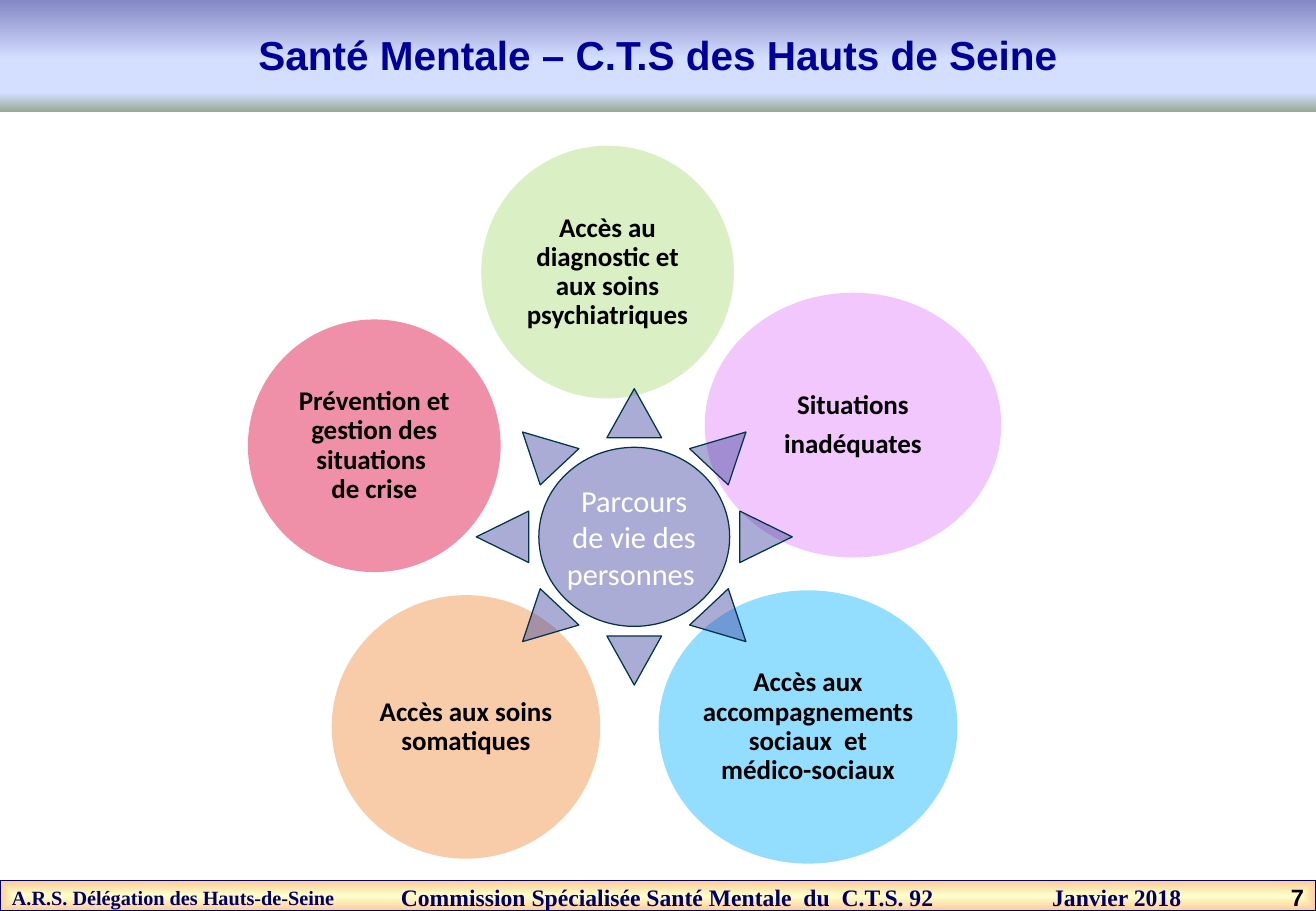
from lxml import etree
from pptx import Presentation
from pptx.dml.color import RGBColor
from pptx.enum.shapes import MSO_SHAPE
from pptx.enum.text import MSO_ANCHOR, MSO_AUTO_SIZE, PP_ALIGN
from pptx.oxml import parse_xml
from pptx.oxml.ns import nsdecls, qn
from pptx.util import Inches, Pt

BLACK = RGBColor(0x00, 0x00, 0x00)
WHITE = RGBColor(0xFF, 0xFF, 0xFF)
TITLE_BLUE = RGBColor(0x00, 0x00, 0x99)
FOOTER_BLUE = RGBColor(0x00, 0x00, 0x66)
SUN_BLUE = RGBColor(0x44, 0x48, 0xA2)
SUN_EDGE = RGBColor(0x00, 0x34, 0x4A)
GREEN = RGBColor(0xDA, 0xEF, 0xC3)
LILAC = RGBColor(0xF1, 0xC7, 0xFD)
SKY = RGBColor(0x93, 0xDE, 0xFF)
PEACH = RGBColor(0xF8, 0xCC, 0xA9)
ROSE = RGBColor(0xF0, 0x90, 0xA8)
CREAM = RGBColor(0xFF, 0xFF, 0xCC)
ORANGE = RGBColor(0xFF, 0xCC, 0x99)
BANNER_STOPS = [
    (0, RGBColor(0x84, 0x88, 0xC4)),
    (53, RGBColor(0xD4, 0xDE, 0xFF)),
    (83, RGBColor(0xD4, 0xDE, 0xFF)),
    (100, RGBColor(0x96, 0xAB, 0x94)),
]
FOOTER_STOPS = [(0, CREAM), (100, ORANGE)]
DOWNWARD = '<a:lin ang="5400000" scaled="0"/>'
FROM_CENTRE = ('<a:path path="shape"><a:fillToRect l="50000" t="50000" '
               'r="50000" b="50000"/></a:path>')

WIDTH, HEIGHT = 10.83, 7.5
BANNER_HEIGHT, FOOTER_HEIGHT = 0.92, 0.25
SUN_BOX = (3.92, 3.2, 2.6, 2.44)

TITLE = "Santé Mentale – C.T.S des Hauts de Seine"
JOURNEY = "Parcours de vie des personnes "
THEMES = [
    ("Accès au diagnostic et aux soins psychiatriques", GREEN, (3.96, 1.2, 2.08, 2.08)),
    ("Situations\ninadéquates", LILAC, (5.8, 2.41, 2.44, 2.18)),
    ("Accès aux accompagnements sociaux  et médico-sociaux", SKY, (5.42, 4.86, 2.46, 2.25)),
    ("Accès aux soins somatiques", PEACH, (2.73, 4.9, 2.21, 2.17)),
    ("Prévention et gestion des situations \vde crise", ROSE, (2.04, 2.63, 2.08, 2.08)),
]

TIMES, ARIAL = "Times New Roman", "Arial"
FOOTER = [
    ("A.R.S. Délégation des Hauts-de-Seine", 0, 3.2, PP_ALIGN.LEFT, TIMES, 12, FOOTER_BLUE),
    ("Commission Spécialisée Santé Mentale  du  C.T.S. 92", 3.2, 5, PP_ALIGN.LEFT, TIMES, 14,
     FOOTER_BLUE),
    ("Janvier 2018", 7.39, 2.43, PP_ALIGN.RIGHT, TIMES, 14, FOOTER_BLUE),
    ("7", 10.33, 0.5, PP_ALIGN.RIGHT, ARIAL, 14, BLACK),
]

CENTRED = {"alignment": PP_ALIGN.CENTER}
TITLE_PARAGRAPH = {**CENTRED, "line_spacing": 1.5}
THEME_PARAGRAPH = {**CENTRED, "line_spacing": 0.9, "space_after": Pt(6)}
TITLE_FONT = {"name": ARIAL, "size": Pt(24), "bold": True}
THEME_FONT = {"name": "Calibri", "size": Pt(16), "bold": True}
JOURNEY_FONT = {"name": "Calibri", "size": Pt(18), "bold": False}
NO_MARGINS = dict.fromkeys(("margin_left", "margin_top", "margin_right", "margin_bottom"), 0)
INSIDE = {**NO_MARGINS, "word_wrap": True, "vertical_anchor": MSO_ANCHOR.MIDDLE}
FOOTER_FRAME = {**INSIDE, "margin_left": Inches(0.1), "margin_right": Inches(0.1)}
TITLE_FRAME = {"word_wrap": True, "vertical_anchor": MSO_ANCHOR.TOP,
               "auto_size": MSO_AUTO_SIZE.NONE}


def apply(target, values):
    """Set each named attribute on the target."""
    for name, value in values.items():
        setattr(target, name, value)


def write(shape, text, frame_format, paragraph_format, font_format, color):
    """Fill a shape with formatted text."""
    frame = shape.text_frame
    frame.text = text
    apply(frame, frame_format)
    for paragraph in frame.paragraphs:
        apply(paragraph, paragraph_format)
        for run in paragraph.runs:
            apply(run.font, font_format)
            run.font.color.rgb = color


def add_gradient(shape, stops, direction):
    """Give a shape a gradient fill."""
    marks = "".join(f'<a:gs pos="{position * 1000}"><a:srgbClr val="{color}"/></a:gs>'
                    for position, color in stops)
    shape.fill.background()
    properties = shape.fill._xPr
    gradient = parse_xml(f'<a:gradFill {nsdecls("a")} rotWithShape="1">'
                         f'<a:gsLst>{marks}</a:gsLst>{direction}</a:gradFill>')
    properties.replace(properties.find(qn("a:noFill")), gradient)


def add_plain(slide, kind, box):
    """Add a preset shape without shadow or outline."""
    shape = slide.shapes.add_shape(kind, *map(Inches, box))
    shape.shadow.inherit = False
    shape.line.fill.background()
    return shape


def outline(shape, color):
    """Draw a thin outline."""
    shape.line.color.rgb = color
    shape.line.width = Pt(0.75)


def add_title(slide):
    """Turn the title placeholder into the banner."""
    banner = slide.shapes.title
    apply(banner, {"left": 0, "top": 0, "width": Inches(WIDTH), "height": Inches(BANNER_HEIGHT)})
    add_gradient(banner, BANNER_STOPS, DOWNWARD)
    write(banner, TITLE, TITLE_FRAME, TITLE_PARAGRAPH, TITLE_FONT, TITLE_BLUE)


def add_footer(slide):
    """Draw the bottom band and its labels."""
    top = HEIGHT - FOOTER_HEIGHT
    band = add_plain(slide, MSO_SHAPE.RECTANGLE, (0, top, WIDTH, FOOTER_HEIGHT))
    add_gradient(band, FOOTER_STOPS, FROM_CENTRE)
    outline(band, FOOTER_BLUE)
    for text, left, width, alignment, font, size, color in FOOTER:
        label = slide.shapes.add_textbox(*map(Inches, (left, top + 0.01, width, FOOTER_HEIGHT)))
        write(label, text, FOOTER_FRAME, {"alignment": alignment},
              {"name": font, "size": Pt(size), "bold": True}, color)


def add_themes(slide):
    """Draw the five theme circles."""
    for text, color, box in THEMES:
        circle = add_plain(slide, MSO_SHAPE.OVAL, box)
        circle.fill.solid()
        circle.fill.fore_color.rgb = color
        write(circle, text, INSIDE, THEME_PARAGRAPH, THEME_FONT, BLACK)


def add_journey(slide):
    """Draw the translucent sun in the middle."""
    sun = add_plain(slide, MSO_SHAPE.SUN, SUN_BOX)
    sun.adjustments[0] = 0.198
    sun.fill.solid()
    sun.fill.fore_color.rgb = SUN_BLUE
    tint = sun.fill._xPr.find(qn("a:solidFill")).find(qn("a:srgbClr"))
    etree.SubElement(tint, qn("a:alpha"), val="45000")
    outline(sun, SUN_EDGE)
    write(sun, JOURNEY, INSIDE, CENTRED, JOURNEY_FONT, WHITE)


def main():
    """Build and save the slide."""
    deck = Presentation()
    apply(deck, {"slide_width": Inches(WIDTH), "slide_height": Inches(HEIGHT)})
    slide = deck.slides.add_slide(deck.slide_layouts[5])
    for add_part in (add_footer, add_themes, add_journey, add_title):
        add_part(slide)
    deck.save("out.pptx")


if __name__ == "__main__":
    main()
